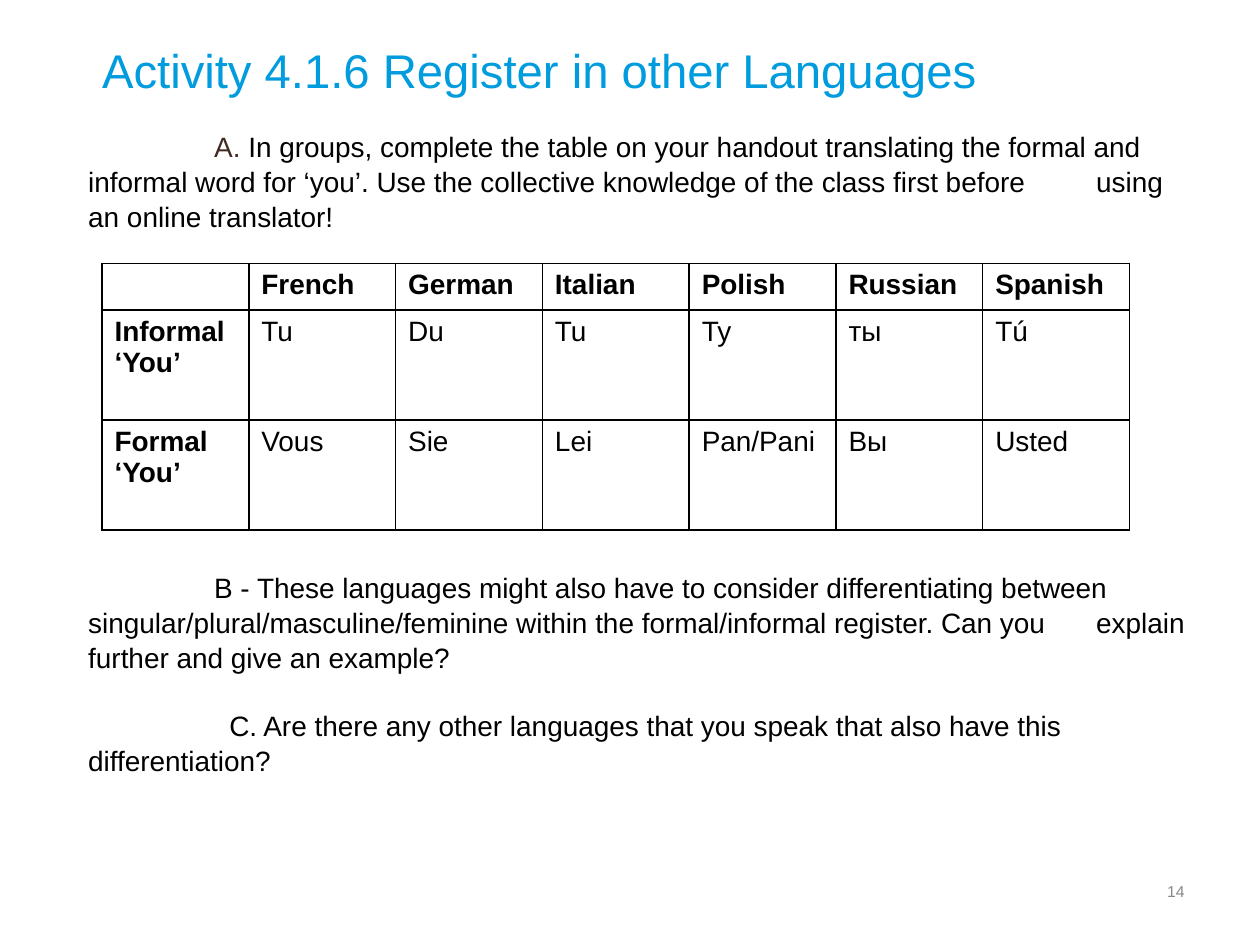
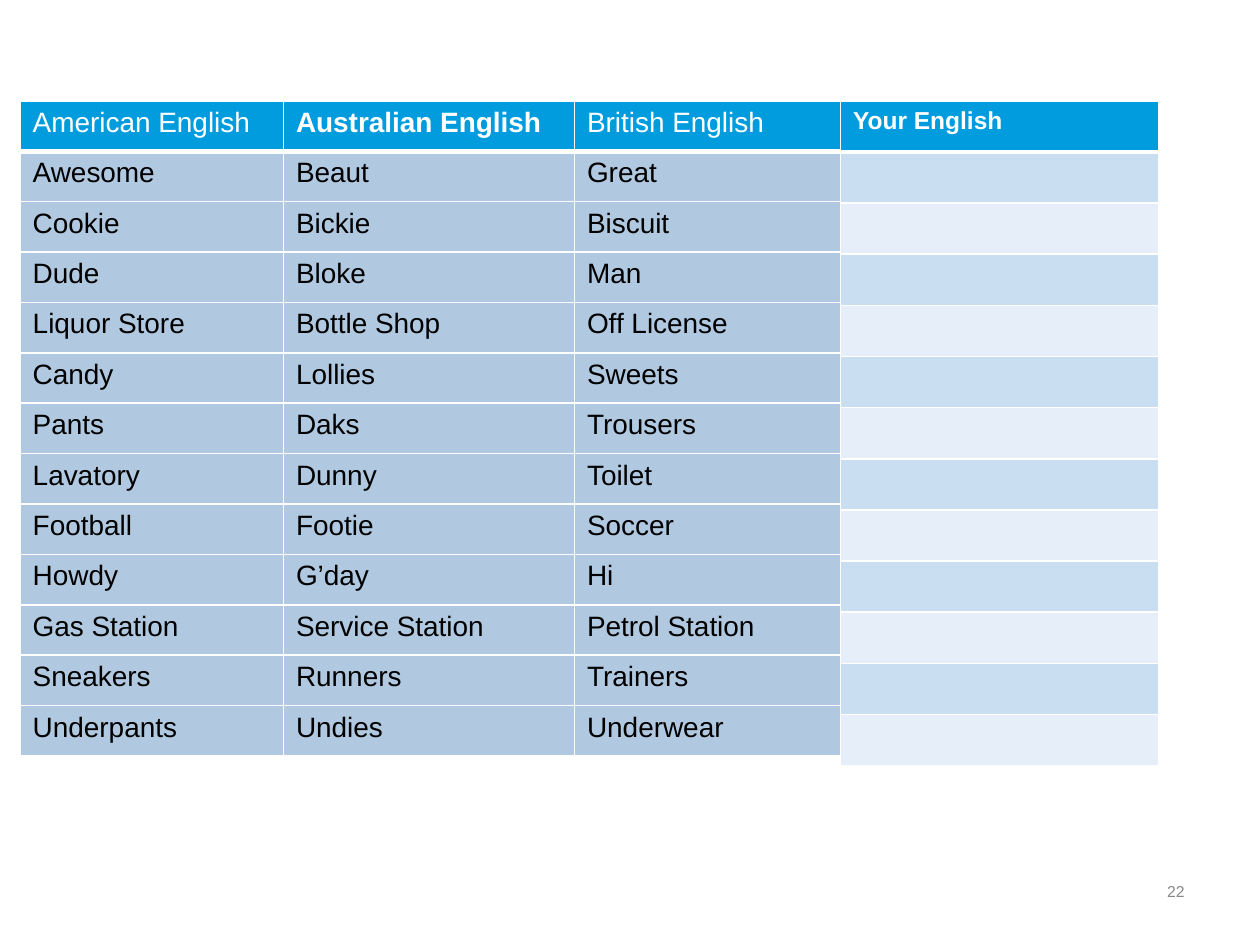
from lxml import etree
from pptx import Presentation
from pptx.dml.color import RGBColor
from pptx.enum.text import MSO_ANCHOR, MSO_AUTO_SIZE, PP_ALIGN
from pptx.oxml.ns import qn
from pptx.util import Inches, Pt

MIDDLE, TOP = MSO_ANCHOR.MIDDLE, MSO_ANCHOR.TOP
LEFT, RIGHT = PP_ALIGN.LEFT, PP_ALIGN.RIGHT
NO_FIT = MSO_AUTO_SIZE.NONE
TITLE_AND_BODY, BLANK = 1, 6

FONT = "Arial"
COLOURS = {
    "accent": "009CDE", "ink": "000000", "paper": "FFFFFF", "marker": "412C24",
    "number": "888888", "word": "B0C9E0", "dark band": "CADEF2", "light band": "E6EFF9",
}
COLUMNS, ROWS = 100, 75
TEXT_SIZE = 16
LINE_SPACING = 1.04

REGISTER = [
    ["", "French", "German", "Italian", "Polish", "Russian", "Spanish"],
    ["Informal ‘You’", "Tu", "Du", "Tu", "Ty", "ты", "Tú"],
    ["Formal ‘You’", "Vous", "Sie", "Lei", "Pan/Pani", "Вы", "Usted"],
]
ENGLISHES = [
    ["American English", "Australian English", "British English"],
    ["Awesome", "Beaut", "Great"],
    ["Cookie", "Bickie", "Biscuit"],
    ["Dude", "Bloke", "Man"],
    ["Liquor Store", "Bottle Shop", "Off License"],
    ["Candy", "Lollies", "Sweets"],
    ["Pants", "Daks", "Trousers"],
    ["Lavatory", "Dunny", "Toilet"],
    ["Football", "Footie", "Soccer"],
    ["Howdy", "G’day", "Hi"],
    ["Gas Station", "Service Station", "Petrol Station"],
    ["Sneakers", "Runners", "Trainers"],
    ["Underpants", "Undies", "Underwear"],
]
YOUR_ENGLISH = [["Your English"]] + [[""] for _ in ENGLISHES[1:]]
TASKS = [
    (["A. ", "In groups, complete the table on your handout translating the formal and "
      "informal word for ‘you’. Use the collective knowledge of the class first before "
      "\tusing an online translator!"], 10, 0),
    (["B - These languages might also have to consider differentiating between "
      "singular/plural/masculine/feminine within the formal/informal register. "
      "Can you \texplain further and give an example?"], 10, 192),
    (["C. Are there any other languages that you speak that also have this "
      "differentiation?"], 11.2, 19),
]


def grid(count):
    """Return the length of a number of grid units."""
    return Inches(count * 10 / COLUMNS)


def style(span, size, colour, bold=False):
    """Set the font of one run."""
    span.font.name, span.font.size, span.font.bold = FONT, Pt(size), bold
    span.font.color.rgb = RGBColor.from_string(COLOURS[colour])


def fit_frame(box, area, anchor, margins=(0, 0)):
    """Place a text shape on the grid and return its prepared frame."""
    box.left, box.top, box.width, box.height = map(grid, area)
    frame = box.text_frame
    frame.word_wrap, frame.auto_size, frame.vertical_anchor = True, NO_FIT, anchor
    frame.margin_left = frame.margin_right = grid(margins[0])
    frame.margin_top = frame.margin_bottom = grid(margins[1])
    return frame


def write_line(box, area, text, size, colour, align, margins=(0, 0)):
    """Write a single vertically centred line into a text shape."""
    frame = fit_frame(box, area, MIDDLE, margins)
    frame.text = text
    para = frame.paragraphs[0]
    para.alignment = align
    style(para.runs[0], size, colour)


def add_page_number(page, number):
    """Add the number at the lower right."""
    box = page.shapes.add_textbox(0, 0, grid(1), grid(1))
    write_line(box, (72.5, 68.7, 22.5, 4), number, 9, "number", RIGHT, (1, 0.5))


def write_tasks(box, area):
    """Fill the body with tasks whose first lines are indented."""
    frame = fit_frame(box, area, TOP)
    for index, (parts, indent, gap) in enumerate(TASKS):
        para = frame.add_paragraph() if index else frame.paragraphs[0]
        properties = para._p.get_or_add_pPr()
        properties.set("marL", str(grid(1.1)))
        properties.set("indent", str(grid(indent)))
        etree.SubElement(properties, qn("a:buNone"))
        para.alignment, para.line_spacing = LEFT, LINE_SPACING
        para.space_before, para.space_after = Pt(gap), Pt(0)
        for part in parts:
            span = para.add_run()
            span.text = part
            style(span, TEXT_SIZE, "marker" if part == "A. " else "ink")


def draw_borders(cell, colour, top, bottom):
    """Give a cell four solid borders."""
    properties = cell._tc.get_or_add_tcPr()
    for side, width in (("L", 1), ("R", 1), ("T", top), ("B", bottom)):
        line = etree.SubElement(properties, qn(f"a:ln{side}"), w=str(Pt(width)))
        fill = etree.SubElement(line, qn("a:solidFill"))
        etree.SubElement(fill, qn("a:srgbClr"), val=COLOURS[colour])


def fill_cell(cell, text, size, ink, fill, bold):
    """Write and colour one table cell."""
    cell.fill.solid()
    cell.fill.fore_color.rgb = RGBColor.from_string(COLOURS[fill])
    cell.margin_left = cell.margin_right = grid(1)
    cell.margin_top = cell.margin_bottom = grid(0.5)
    cell.text = text
    para = cell.text_frame.paragraphs[0]
    for span in para.runs:
        style(span, size, ink, bold)
    if not text:
        etree.SubElement(para._p, qn("a:endParaRPr"), sz=str(size * 100))


def add_grid_table(page, origin, widths, heights, words, look, border, rule=1):
    """Add a table; look gives size, ink, fill and weight by row and column."""
    frame = page.shapes.add_table(len(words), len(widths), *map(grid, origin),
                                  grid(sum(widths)), grid(sum(heights)))
    table = frame.table
    table.first_row = table.horz_banding = False
    for column, width in zip(table.columns, widths):
        column.width = grid(width)
    for row, (line, height) in enumerate(zip(words, heights)):
        table.rows[row].height = grid(height)
        for column, text in enumerate(line):
            cell = table.cell(row, column)
            draw_borders(cell, border, rule if row == 1 else 1, rule if row == 0 else 1)
            fill_cell(cell, text, *look(row, column))


def register_look(row, column):
    """Style the table of pronouns."""
    return TEXT_SIZE, "ink", "paper", row == 0 or column == 0


def english_look(row, column):
    """Style the table of English words."""
    if row == 0:
        return TEXT_SIZE, "paper", "accent", column == 1
    return TEXT_SIZE, "ink", "word", False


def answer_look(row, column):
    """Style the banded column left open for answers."""
    if row == 0:
        return 14, "paper", "accent", True
    return 14, "ink", "dark band" if row % 2 else "light band", False


def build_register_page(deck):
    """Build the activity about formal and informal pronouns."""
    page = deck.slides.add_slide(deck.slide_layouts[TITLE_AND_BODY])
    write_tasks(page.placeholders[1], (5.9, 10.2, 89.1, 56.8))
    write_line(page.shapes.title, (8.1, 3, 86.9, 5),
               "Activity 4.1.6 Register in other Languages", 27, "accent", LEFT)
    add_page_number(page, "14")
    add_grid_table(page, (8.1, 20.9), [11.65] * 7, [3.6, 8.73, 8.73],
                   REGISTER, register_look, "ink")


def build_english_page(deck):
    """Build the comparison of varieties of English."""
    page = deck.slides.add_slide(deck.slide_layouts[BLANK])
    add_page_number(page, "22")
    count = len(ENGLISHES)
    add_grid_table(page, (1.6, 8), [20.9, 23.1, 21.15], [4] * count,
                   ENGLISHES, english_look, "paper", 3)
    add_grid_table(page, (66.7, 8), [25.3], [4.06] * count,
                   YOUR_ENGLISH, answer_look, "paper", 3)


def main():
    """Build and save the deck."""
    deck = Presentation()
    deck.slide_width, deck.slide_height = grid(COLUMNS), grid(ROWS)
    build_register_page(deck)
    build_english_page(deck)
    deck.save("out.pptx")


if __name__ == "__main__":
    main()
